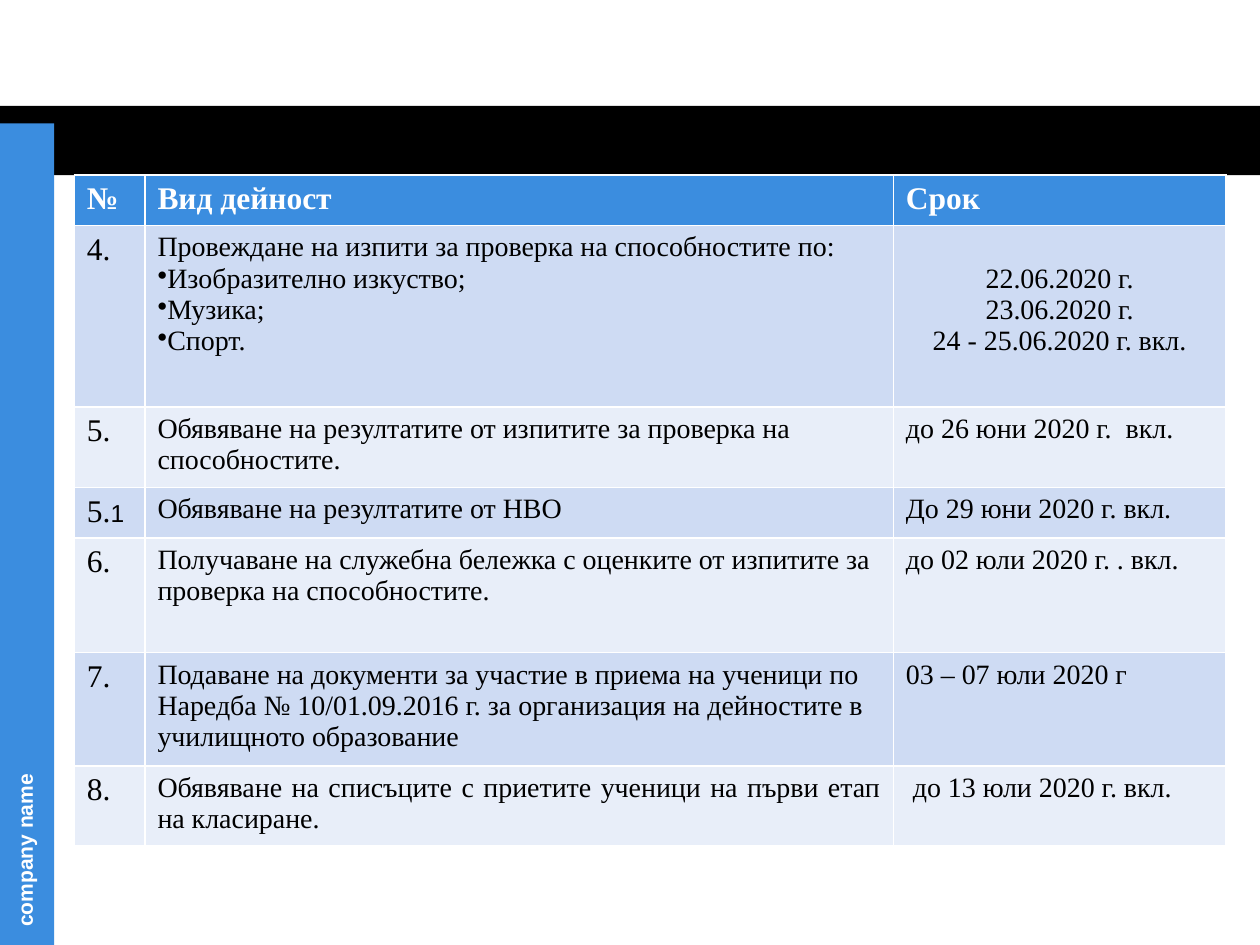
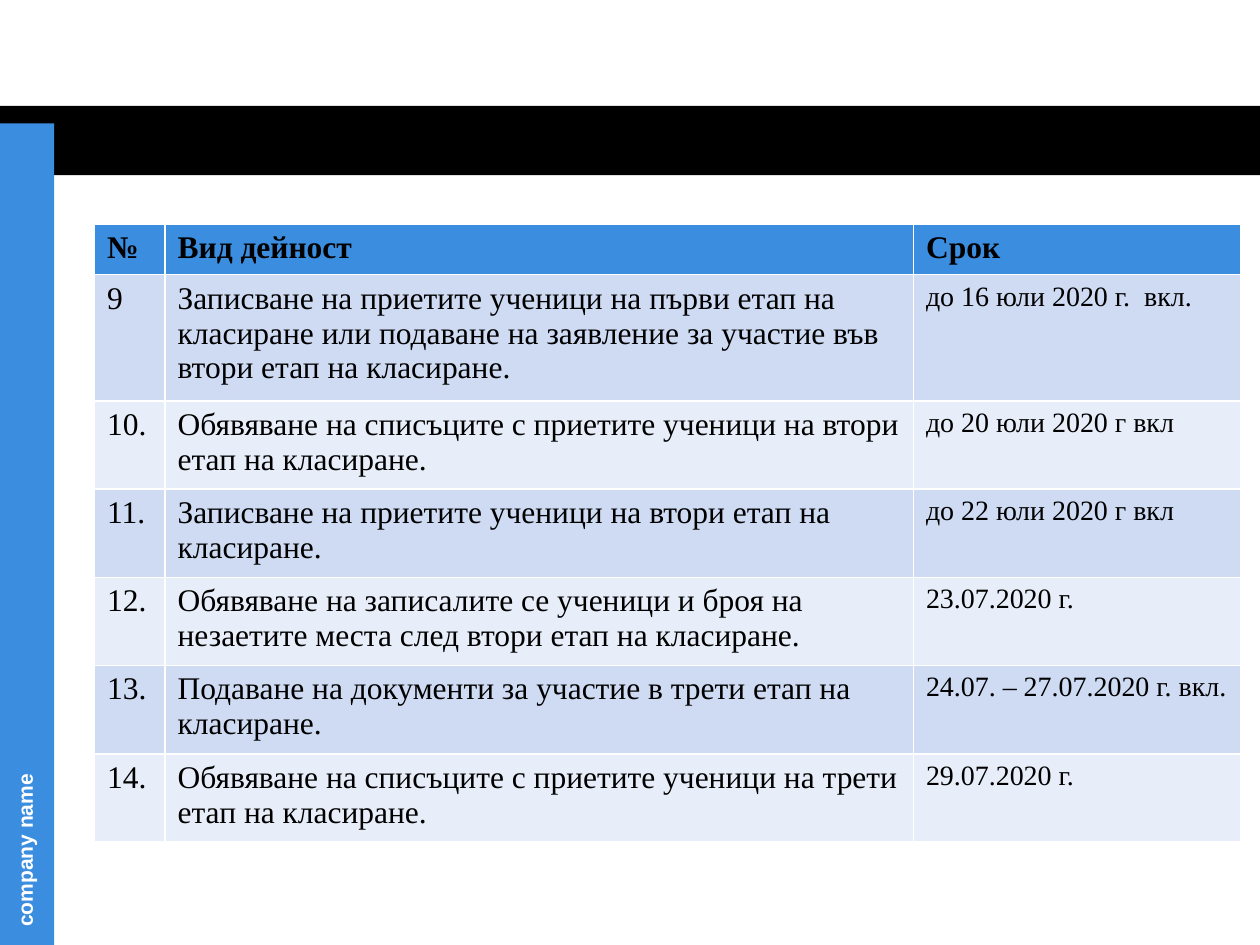
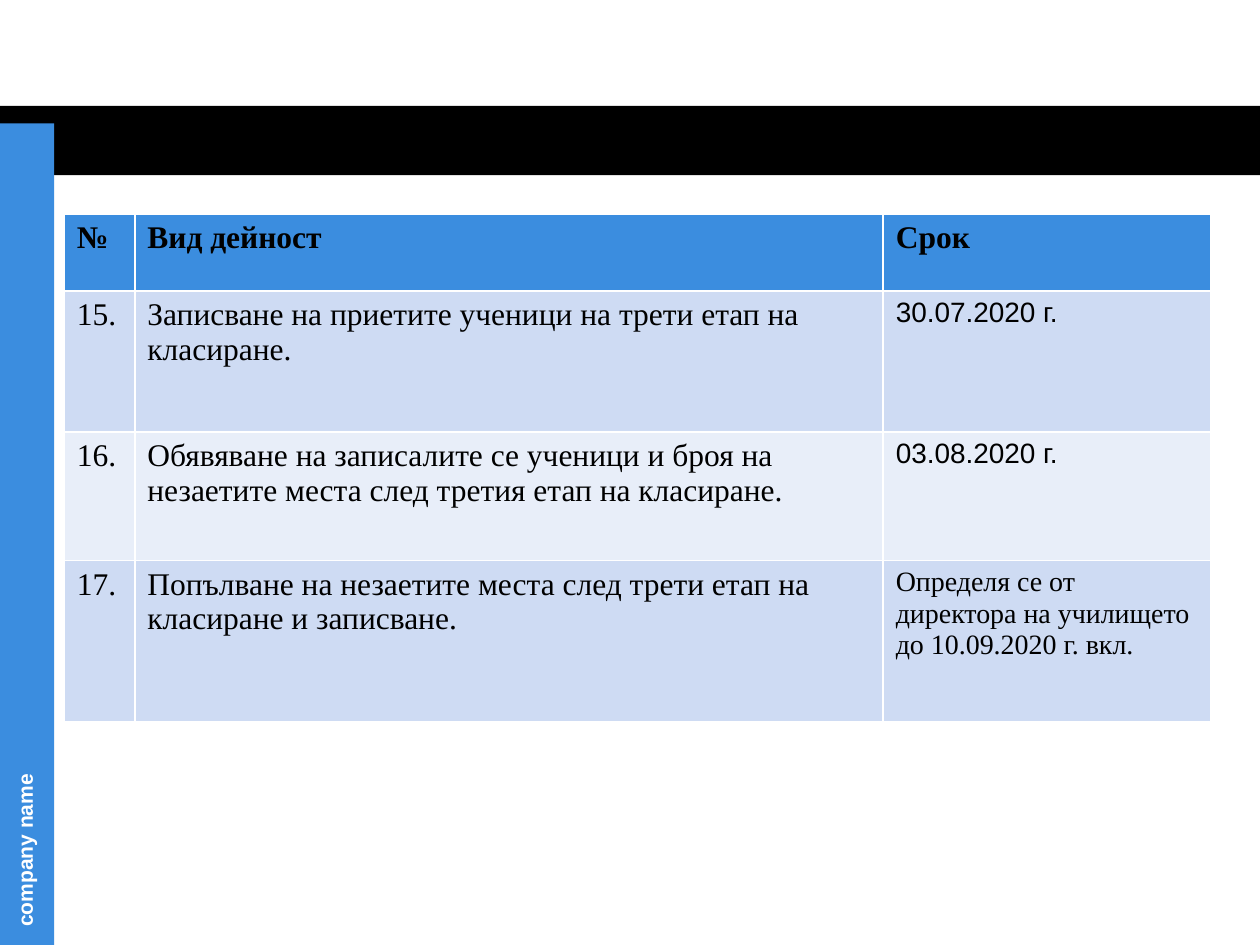
import pptx
import pptx.dml.color
import pptx.enum.shapes
import pptx.enum.text
import pptx.oxml
import pptx.oxml.ns
import pptx.util

Inches = pptx.util.Inches
Pt = pptx.util.Pt
RGB = pptx.dml.color.RGBColor.from_string
ALIGN = pptx.enum.text.PP_ALIGN

THEME = {
    "black": RGB("000000"),
    "white": RGB("FFFFFF"),
    "blue": RGB("3B8DDF"),
    "bands": [RGB("E8EEF9"), RGB("CEDBF3")],
    "label": {"name": "Arial", "size": Pt(12), "bold": True},
    "head": {"name": "Times New Roman", "size": Pt(18), "bold": True},
    "large": {"name": "Times New Roman", "size": Pt(18), "bold": False},
    "small": {"name": "Times New Roman", "size": Pt(16), "bold": False},
    "sans": {"name": "Arial", "size": Pt(16), "bold": False},
    "suffix": {"name": "Arial", "size": Pt(14), "bold": False},
}

HEADER = ("№", "Вид дейност", "Срок")

TABLES = [
    {
        "at": (0.59, 1.39), "cols": (0.56, 5.94, 2.64),
        "rows": (0.4, 1.44, 0.64, 0.4, 0.91, 0.9, 0.63),
        "head_color": "white", "styles": ("large", "small", "small"),
        "cells": [
            ("4.",
             "Провеждане на изпити за проверка на способностите по:\n"
             "•Изобразително изкуство;\n•Музика;\n•Спорт.",
             "22.06.2020 г.\n23.06.2020 г.\n24 - 25.06.2020 г. вкл."),
            ("5.", "Обявяване на резултатите от изпитите за проверка на способностите.",
             "до 26 юни 2020 г.  вкл."),
            ("5.", "Обявяване на резултатите от НВО", "До 29 юни 2020 г. вкл."),
            ("6.", "Получаване на служебна бележка с оценките от изпитите за "
             "проверка на способностите.", "до 02 юли 2020 г. . вкл."),
            ("7.", "Подаване на документи за участие в приема на ученици по "
             "Наредба № 10/01.09.2016 г. за организация на дейностите в "
             "училищното образование", "03 – 07 юли 2020 г"),
            ("8.", "Обявяване на списъците с приетите ученици на първи етап "
             "на класиране.", " до 13 юли 2020 г. вкл."),
        ],
    },
    {
        "at": (0.75, 1.78), "cols": (0.56, 5.94, 2.6),
        "rows": (0.4, 1.0) + (0.7,) * 5,
        "head_color": "black", "styles": ("large", "large", "small"),
        "cells": [
            ("9", "Записване на приетите ученици на първи етап на класиране "
             "или подаване на заявление за участие във втори етап на класиране.",
             "до 16 юли 2020 г.  вкл."),
            ("10.", "Обявяване на списъците с приетите ученици на втори етап "
             "на класиране.", "до 20 юли 2020 г вкл"),
            ("11.", "Записване на приетите ученици на втори етап на класиране.",
             "до 22 юли 2020 г вкл"),
            ("12.", "Обявяване на записалите се ученици и броя на незаетите "
             "места след втори етап на класиране.", "23.07.2020 г."),
            ("13.", "Подаване на документи за участие в трети етап на класиране.",
             "24.07. – 27.07.2020 г. вкл."),
            ("14.", "Обявяване на списъците с приетите ученици на трети етап "
             "на класиране.", "29.07.2020 г."),
        ],
    },
    {
        "at": (0.51, 1.7), "cols": (0.56, 5.94, 2.6),
        "rows": (0.61, 1.12, 1.02, 1.28),
        "head_color": "black", "styles": ("large", "large", "sans"),
        "cells": [
            ("15.", "Записване на приетите ученици на трети етап на класиране.",
             "30.07.2020 г."),
            ("16.", "Обявяване на записалите се ученици и броя на незаетите "
             "места след третия етап на класиране.", "03.08.2020 г."),
            ("17.", "Попълване на незаетите места след трети етап на класиране "
             "и записване.", "Определя се от директора на училището до "
             "10.09.2020 г. вкл."),
        ],
    },
]


def add_run(p, text, style, color):
    r = p.add_run()
    r.text = text
    for key, value in THEME[style].items():
        setattr(r.font, key, value)
    r.font.color.rgb = THEME[color]


def fill_cell(cell, text, style, color, fill):
    cell.fill.solid()
    cell.fill.fore_color.rgb = fill
    tf = cell.text_frame
    for i, line in enumerate(text.split("\n")):
        p = tf.paragraphs[0] if i == 0 else tf.add_paragraph()
        if line.startswith("•"):
            pPr = p._p.get_or_add_pPr()
            pPr.set("marL", "0")
            pPr.set("indent", "0")
            bullet = pptx.oxml.parse_xml(
                f'<a:buChar {pptx.oxml.ns.nsdecls("a")} char="•"/>')
            pPr.append(bullet)
        add_run(p, line.lstrip("•"), style, color)


prs = pptx.Presentation()
prs.slide_width, prs.slide_height = Inches(10), Inches(7.5)
layout = prs.slide_layouts[6]
slides = [prs.slides.add_slide(layout) for _ in TABLES]

shapes = slides[0].shapes
frame = []
for box, color in (((0, 0.84, 10, 0.55), "black"), ((0, 0.98, 0.43, 6.52), "blue")):
    sp = shapes.add_shape(pptx.enum.shapes.MSO_SHAPE.RECTANGLE, *map(Inches, box))
    sp.shadow.inherit = False
    sp.fill.solid()
    sp.fill.fore_color.rgb = THEME[color]
    sp.line.fill.background()
    frame.append(sp)

label = shapes.add_textbox(*map(Inches, (-1.52, 5.59, 3.43, 0.3)))
label.rotation = 270
label.text_frame.word_wrap = True
add_run(label.text_frame.paragraphs[0], "company name", "label", "white")
frame.append(label)

for i, sp in enumerate(frame):
    sp._element.nvSpPr.cNvPr.set("id", str(20 + i))
    layout.shapes._spTree.append(sp._element)

tables = []
for s, t in zip(slides, TABLES):
    size = (sum(t["cols"]), sum(t["rows"]))
    table = s.shapes.add_table(len(t["rows"]), len(t["cols"]),
                               *map(Inches, t["at"] + size)).table
    for column, width in zip(table.columns, t["cols"]):
        column.width = Inches(width)
    for row, height in zip(table.rows, t["rows"]):
        row.height = Inches(height)
    for c, text in enumerate(HEADER):
        fill_cell(table.cell(0, c), text, "head", t["head_color"], THEME["blue"])
    for r, texts in enumerate(t["cells"], 1):
        for c, text in enumerate(texts):
            fill_cell(table.cell(r, c), text, t["styles"][c], "black",
                      THEME["bands"][r % 2])
    tables.append(table)

first, _, last = tables
add_run(first.cell(3, 0).text_frame.paragraphs[0], "1", "suffix", "black")
for row in (1, 6):
    first.cell(row, 1).text_frame.paragraphs[0].alignment = ALIGN.JUSTIFY
exam_dates = first.cell(1, 2)
exam_dates.margin_top = Inches(0.3)
for p in exam_dates.text_frame.paragraphs:
    p.alignment = ALIGN.CENTER
for key, value in THEME["small"].items():
    setattr(last.cell(3, 2).text_frame.paragraphs[0].runs[0].font, key, value)

prs.save("out.pptx")
